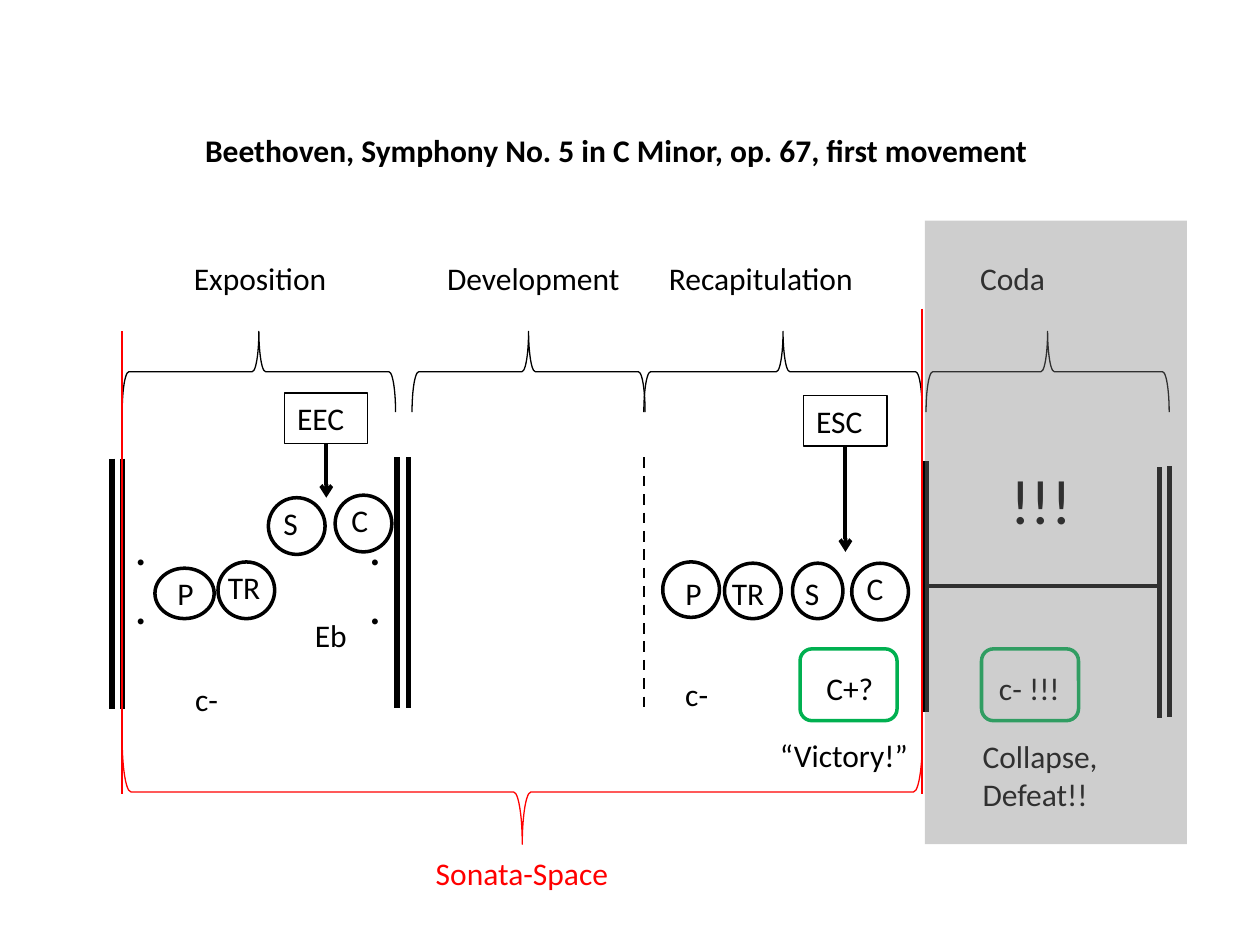
from dataclasses import dataclass
from lxml.etree import SubElement
from pptx import Presentation
from pptx.dml.color import RGBColor
from pptx.enum.dml import MSO_LINE
from pptx.enum.shapes import MSO_CONNECTOR, MSO_SHAPE
from pptx.enum.text import MSO_AUTO_SIZE, PP_ALIGN
from pptx.oxml.ns import qn
from pptx.util import Inches, Pt


@dataclass(frozen=True)
class Theme:
    font: str = "Calibri"
    ink: str = "000000"
    red: str = "FF0000"
    green: str = "00B050"
    shade: str = "808080"
    body: int = 18
    dots: int = 28
    shout: int = 36
    thin: float = 0.75
    edge: float = 1
    dash: float = 1.5
    ring: float = 2
    arrow: float = 2.25
    bar: float = 3


THEME = Theme()


@dataclass(frozen=True)
class Box:
    shapes: object
    left: float
    top: float
    width: float
    height: float

    def place(self, x, y):
        return Inches(self.left + x), Inches(self.top + y)


def paint(line, color, width):
    line.color.rgb = RGBColor.from_string(color)
    line.width = Pt(width)


def write(frame, lines, color=THEME.ink, size=THEME.body, bold=False):
    frame.word_wrap = True
    frame.auto_size = MSO_AUTO_SIZE.SHAPE_TO_FIT_TEXT
    for i, text in enumerate(lines):
        para = frame.paragraphs[0] if i == 0 else frame.add_paragraph()
        para.alignment = PP_ALIGN.LEFT
        run = para.add_run()
        run.text = text
        run.font.name = THEME.font
        run.font.size = Pt(size)
        run.font.bold = bold
        run.font.color.rgb = RGBColor.from_string(color)


def label(box, x, y, w, *lines, h=0.4, **style):
    text = box.shapes.add_textbox(*box.place(x, y), Inches(w), Inches(h))
    write(text.text_frame, lines, **style)
    return text


def shape(box, kind, x, y, w, h, color=THEME.ink, width=THEME.thin):
    item = box.shapes.add_shape(kind, *box.place(x, y), Inches(w), Inches(h))
    item.shadow.inherit = False
    item.fill.background()
    paint(item.line, color, width)
    return item


def line(box, x1, y1, x2, y2, color=THEME.ink, width=THEME.bar):
    item = box.shapes.add_connector(
        MSO_CONNECTOR.STRAIGHT, *box.place(x1, y1), *box.place(x2, y2))
    paint(item.line, color, width)
    SubElement(item._element.spPr, qn("a:effectLst"))
    return item


def bar(box, x, y):
    line(box, x, y, x, y + 1.99)


def brace(box, kind, x, y, w, h, color=THEME.ink):
    item = shape(box, kind, x + (w - h) / 2, y + (h - w) / 2, h, w, color)
    item.rotation = 270


def span(box):
    brace(box, MSO_SHAPE.RIGHT_BRACE, 0, 0, box.width, 0.64)


def zone(box, text, x, y, w, h, dx, dy, wide):
    shape(box, MSO_SHAPE.OVAL, x, y, w, h, width=THEME.ring)
    label(box, x + dx, y + dy, wide, text)


def goal(box, text, x, y, end):
    w, h = 0.66, 0.4
    mid = x + w / 2
    card = shape(box, MSO_SHAPE.RECTANGLE, x, y, w, h)
    write(card.text_frame, [text])
    arrow = line(box, mid, y + h, mid, end, width=THEME.arrow)
    arrow.begin_connect(card, 2)
    SubElement(arrow.line._get_or_add_ln(), qn("a:tailEnd"), type="arrow")


def key(box, text, x, dx, wide):
    label(box, x + dx, 2.63, wide, text)
    shape(box, MSO_SHAPE.ROUNDED_RECTANGLE, x, 2.52, 0.77, 0.57,
          THEME.green, THEME.ring)


def heading(box):
    label(box, 0.09, 0, 7.17,
          "Beethoven, Symphony No. 5 in C Minor, op. 67, first movement",
          bold=True)
    names = label(box, 0, 1.02, box.width,
                  "Exposition\tDevelopment\tRecapitulation\tCoda")
    props = names.text_frame.paragraphs[0]._p.get_or_add_pPr()
    tabs = SubElement(props, qn("a:tabLst"))
    for stop in (2.01, 3.77, 6.24):
        SubElement(tabs, qn("a:tab"), pos=str(Inches(stop)), algn="l")


def opening(box):
    span(box)
    for x, y in ((-0.08, 1.01), (0, 1.01), (2.18, 1), (2.27, 1)):
        bar(box, x, y)
    for x, wide in ((0, 0.34), (1.86, 0.43)):
        label(box, x, 1.42, wide, ".", ".", h=1.04, size=THEME.dots)
    zone(box, "P", 0.26, 1.88, 0.47, 0.4, 0.08, 0, 0.39)
    zone(box, "TR", 0.76, 1.83, 0.45, 0.45, -0.02, 0, 0.6)
    zone(box, "S", 1.16, 1.32, 0.45, 0.45, 0.02, 0, 0.41)
    zone(box, "C", 1.69, 1.3, 0.45, 0.45, 0.03, 0, 0.41)
    goal(box, "EEC", 1.29, 0.49, 1.32)
    label(box, 1.43, 2.21, 0.5, "Eb")
    label(box, 0.48, 2.72, 0.5, "c-")


def reprise(box):
    span(box)
    border = line(box, 0, 1, 0, 3, width=THEME.dash)
    border.line.dash_style = MSO_LINE.DASH
    zone(box, "P", 0.15, 1.83, 0.45, 0.44, 0.08, 0.05, 0.41)
    zone(box, "TR", 0.64, 1.84, 0.45, 0.44, -0.04, 0.04, 0.6)
    zone(box, "S", 1.18, 1.84, 0.4, 0.44, 0, 0.04, 0.41)
    zone(box, "C", 1.65, 1.84, 0.45, 0.45, 0.02, 0, 0.41)
    goal(box, "ESC", 1.27, 0.51, 1.75)
    label(box, 0.23, 2.68, 0.5, "c-")
    key(box, "C+?", 1.24, 0.11, 0.6)
    label(box, 0.98, 3.16, 1.25, "“Victory!”")


def coda(box):
    span(box)
    for x, y in ((0, 1.03), (1.85, 1.08), (1.93, 1.07)):
        bar(box, x, y)
    line(box, 0, 2.02, 1.85, 2.02, width=THEME.arrow)
    label(box, 0.57, 0.98, 0.72, "!!!", h=0.71, size=THEME.shout)
    key(box, "c- !!!", 0.44, 0.04, 0.69)
    label(box, 0.35, 3.17, 1.16, "Collapse,", "Defeat!!", h=0.71)


def sonata(box):
    for x, y in ((0, 0.18), (box.width, 0)):
        line(box, x, y, x, 3.85, THEME.red, THEME.edge)
    brace(box, MSO_SHAPE.LEFT_BRACE, 0, 3.42, box.width, 0.83, THEME.red)
    label(box, 2.39, 4.28, 1.75, "Sonata-Space", color=THEME.red)


def veil(box):
    cover = shape(box, MSO_SHAPE.RECTANGLE, 0, 0, box.width, box.height)
    cover.line.fill.background()
    cover.fill.solid()
    cover.fill.fore_color.rgb = RGBColor.from_string(THEME.shade)
    tint = cover._element.spPr.find(qn("a:solidFill"))[0]
    SubElement(tint, qn("a:alpha"), val="38000")


def main():
    deck = Presentation()
    deck.slide_width, deck.slide_height = Inches(10), Inches(7.5)
    shapes = deck.slides.add_slide(deck.slide_layouts[6]).shapes
    top, tall = 2.63, 3.88
    opening(Box(shapes, 0.97, top, 2.17, tall))
    span(Box(shapes, 3.27, top, 1.85, tall))
    reprise(Box(shapes, 5.11, top, 2.21, tall))
    coda(Box(shapes, 7.35, top, 1.93, tall))
    sonata(Box(shapes, 0.97, 2.45, 6.35, 4.68))
    heading(Box(shapes, 1.44, 0.99, 8.14, 1.42))
    veil(Box(shapes, 7.34, 1.75, 2.08, 4.95))
    deck.save("out.pptx")


if __name__ == "__main__":
    main()
